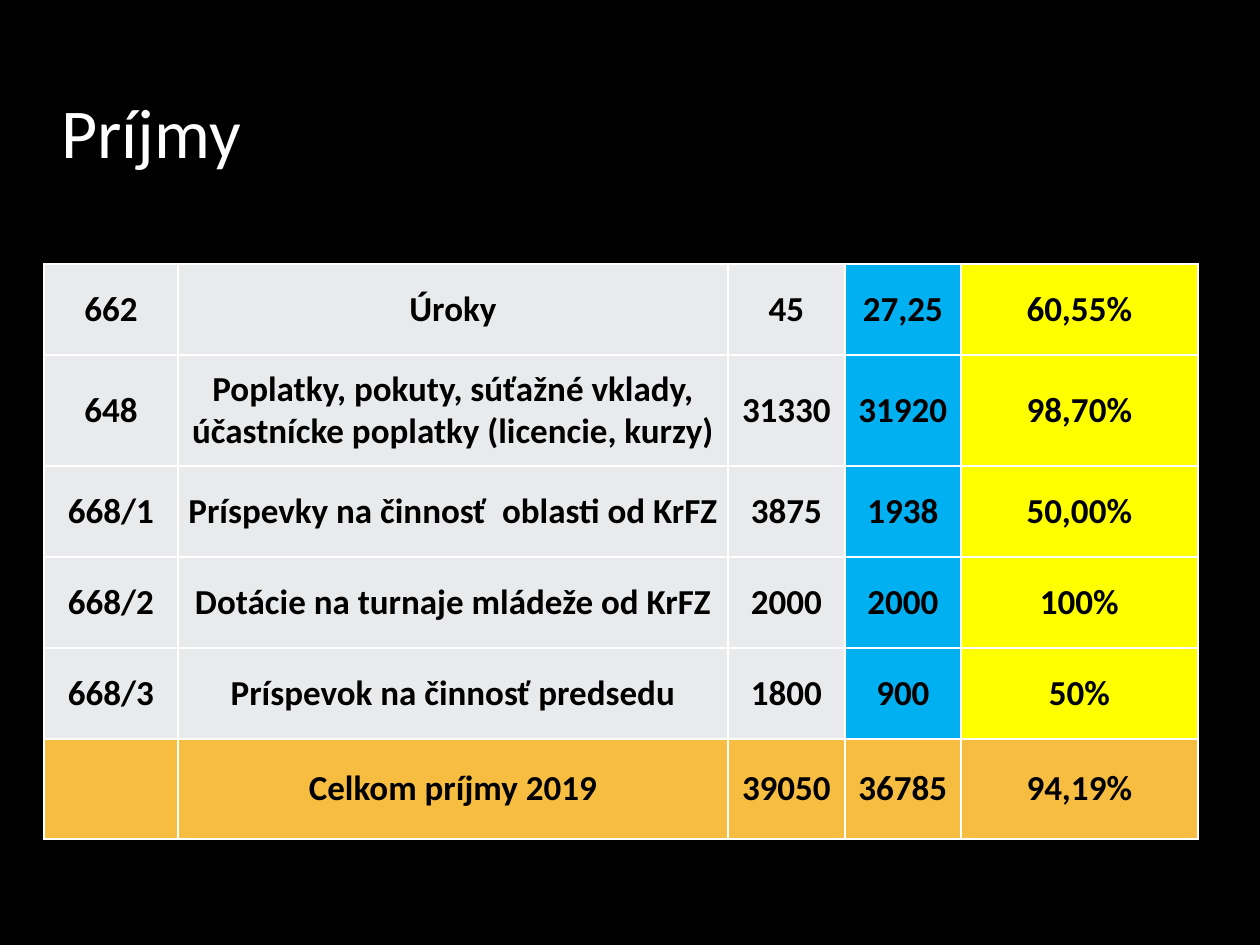
from lxml import etree
from pptx import Presentation
from pptx import util as u
from pptx.dml.color import RGBColor
from pptx.enum import text
from pptx.oxml import ns

EMU_PER_PX = 914400 / 126
COLORS = {
    "background": "000000",
    "title": "FFFFFF",
    "border": "FFFFFF",
    "body": "000000",
    "plain": "E9EAEC",
    "actual": "00B0F0",
    "percent": "FFFF00",
    "total": "F7BD40",
}
TITLE_FONT = {"name": "Calibri", "size": u.Pt(40)}
CELL_FONT = {"name": "Calibri", "size": u.Pt(20), "bold": True}
CELL_FORMAT = {
    "margin_left": 0,
    "margin_right": 0,
    "margin_top": 0,
    "margin_bottom": 0,
    "vertical_anchor": text.MSO_ANCHOR.MIDDLE,
}
BORDER_WIDTH = u.Pt(1)

COLUMN_WIDTHS = [134, 550, 117, 116, 237]
ROW_HEIGHTS = [91, 111, 91, 91, 91, 100]
COLUMN_FILLS = ["plain", "plain", "plain", "actual", "percent"]
INCOME = [
    ["662", "Úroky", "45", "27,25", "60,55%"],
    ["648", "Poplatky, pokuty, súťažné vklady, účastnícke poplatky (licencie, kurzy)",
     "31330", "31920", "98,70%"],
    ["668/1", "Príspevky na činnosť  oblasti od KrFZ", "3875", "1938", "50,00%"],
    ["668/2", "Dotácie na turnaje mládeže od KrFZ", "2000", "2000", "100%"],
    ["668/3", "Príspevok na činnosť predsedu", "1800", "900", "50%"],
    ["", "Celkom príjmy 2019", "39050", "36785", "94,19%"],
]


def px(*lengths):
    """Turn pixel lengths into a list of EMU."""
    return [u.Emu(round(length * EMU_PER_PX)) for length in lengths]


def set_font(font, values, color):
    for name, value in values.items():
        setattr(font, name, value)
    font.color.rgb = RGBColor.from_string(COLORS[color])


presentation = Presentation()
presentation.slide_width, presentation.slide_height = px(1260, 945)
slide = presentation.slides.add_slide(presentation.slide_layouts[6])
slide.background.fill.solid()
slide.background.fill.fore_color.rgb = RGBColor.from_string(COLORS["background"])

# Title
title = slide.shapes.add_textbox(*px(49, 32, 1058, 147)).text_frame
title.word_wrap = True
title.vertical_anchor = text.MSO_ANCHOR.BOTTOM
title.text = "Príjmy"
set_font(title.paragraphs[0].runs[0].font, TITLE_FONT, "title")

# Income table
table = slide.shapes.add_table(
    len(ROW_HEIGHTS), len(COLUMN_WIDTHS),
    *px(44, 264, sum(COLUMN_WIDTHS), sum(ROW_HEIGHTS)),
).table
table.first_row = table.horz_banding = False
for column, width in zip(table.columns, px(*COLUMN_WIDTHS)):
    column.width = width
for row, height in zip(table.rows, px(*ROW_HEIGHTS)):
    row.height = height

for row_index, values in enumerate(INCOME):
    is_total = row_index == len(INCOME) - 1
    for column_index, value in enumerate(values):
        cell = table.cell(row_index, column_index)
        for name, setting in CELL_FORMAT.items():
            setattr(cell, name, setting)

        # Borders have to stand before the fill in the cell properties
        properties = cell._tc.get_or_add_tcPr()
        for side in ["lnL", "lnR", "lnT", "lnB"]:
            line = etree.SubElement(properties, ns.qn(f"a:{side}"), w=str(BORDER_WIDTH))
            line_fill = etree.SubElement(line, ns.qn("a:solidFill"))
            etree.SubElement(line_fill, ns.qn("a:srgbClr"), val=COLORS["border"])

        fill_name = "total" if is_total else COLUMN_FILLS[column_index]
        cell.fill.solid()
        cell.fill.fore_color.rgb = RGBColor.from_string(COLORS[fill_name])

        cell.text = value
        paragraph = cell.text_frame.paragraphs[0]
        paragraph.alignment = text.PP_ALIGN.CENTER
        for run in paragraph.runs:
            set_font(run.font, CELL_FONT, "body")

presentation.save("out.pptx")
